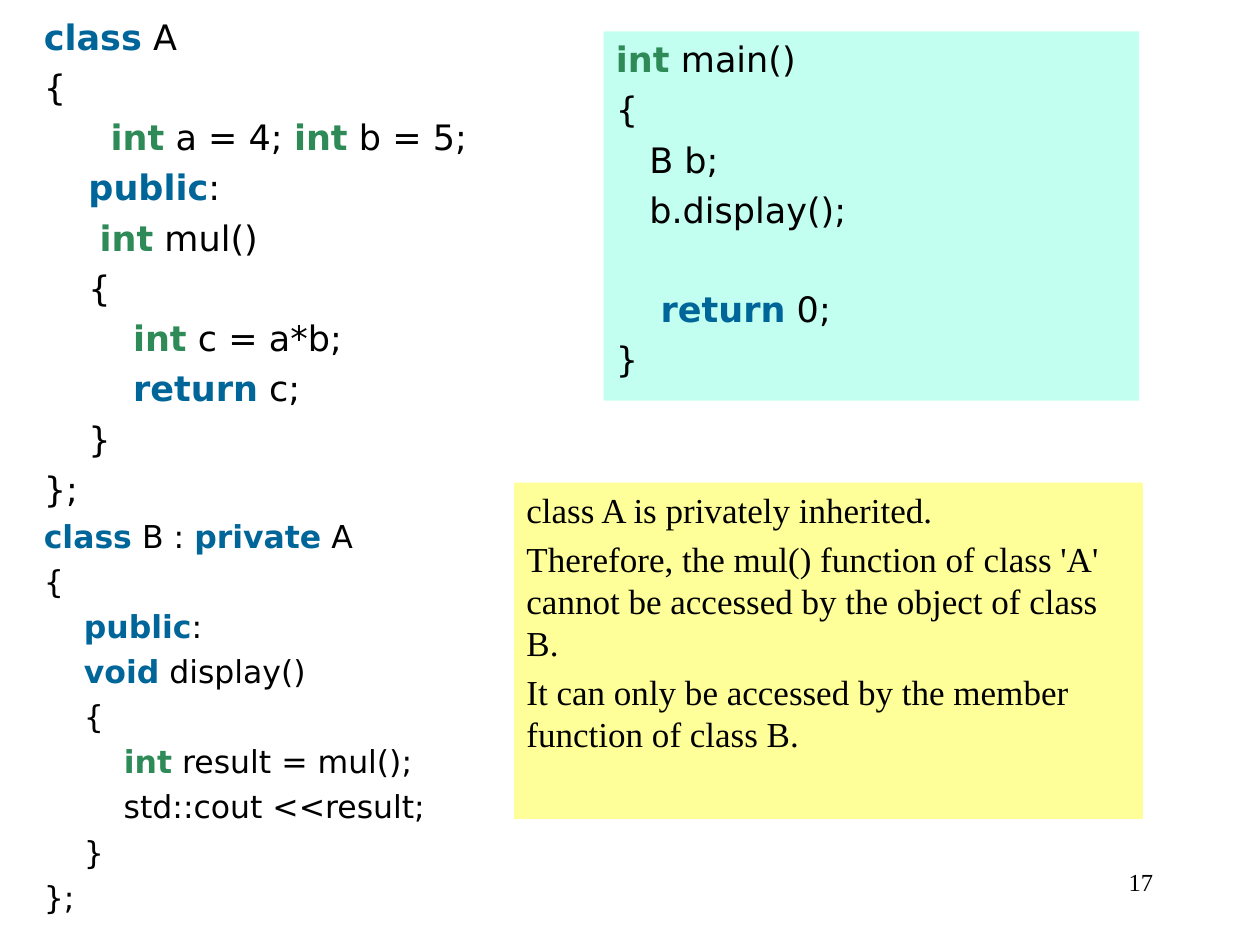
"""Build a slide on private inheritance with two code panels and an explanation."""
from dataclasses import dataclass
from typing import Optional

import pptx
import pptx.dml.color
import pptx.enum.text
import pptx.util

CODE_FONT = "DejaVu Sans"
PROSE_FONT = "Times New Roman"
BLACK = "000000"
KEYWORD_BLUE = "006699"
TYPE_GREEN = "2E8B57"
KEYWORD_COLORS = {
    "class": KEYWORD_BLUE,
    "public": KEYWORD_BLUE,
    "private": KEYWORD_BLUE,
    "void": KEYWORD_BLUE,
    "return": KEYWORD_BLUE,
    "int": TYPE_GREEN,
}

CLASS_A = """|class| A
{
      |int| a = 4; |int| b = 5;
    |public|:
     |int| mul()
    {
        |int| c = a*b;
        |return| c;
    }
};"""

CLASS_B = """|class| B : |private| A
{
    |public|:
    |void| display()
    {
        |int| result = mul();
        std::cout <<result;
    }
};"""

MAIN_START = """|int| main()
{
   B b;
   b.display();"""

MAIN_END = """    |return| 0;
}"""

EXPLANATION = [
    "class A is privately inherited.",
    "Therefore, the mul() function of class 'A' cannot be accessed by the object of class B.",
    "It can only be accessed by the member function of class B.",
]


@dataclass
class Panel:
    """Position and optional fill of a text panel, in inches."""

    left: float
    top: float
    width: float
    height: float
    fill: Optional[str] = None


@dataclass
class CodeBlock:
    """Code with keywords set off by bars, and its spacing in points."""

    code: str
    size: float
    gap: float
    gap_above: float


CLASSES_PANEL = Panel(0.25, 0.07, 4.67, 6.7)
MAIN_PANEL = Panel(4.79, 0.25, 4.25, 2.93, "C2FFF0")
EXPLANATION_PANEL = Panel(4.08, 3.83, 4.99, 2.67, "FFFF99")
NUMBER_PANEL = Panel(7.17, 6.83, 2.08, 0.5)


def color(value: str) -> pptx.dml.color.RGBColor:
    """Return the colour for a hex string."""
    return pptx.dml.color.RGBColor.from_string(value)


def format_run(run, font_name: str, size: float, hex_color: str = BLACK, bold: bool = False) -> None:
    """Set the font, size, colour and weight of a run."""
    run.font.name = font_name
    run.font.size = pptx.util.Pt(size)
    run.font.bold = bold
    run.font.color.rgb = color(hex_color)


def add_panel(slide, panel: Panel):
    """Add a wrapping text panel and return its text frame."""
    bounds = (panel.left, panel.top, panel.width, panel.height)
    shape = slide.shapes.add_textbox(*map(pptx.util.Inches, bounds))
    if panel.fill:
        shape.fill.solid()
        shape.fill.fore_color.rgb = color(panel.fill)
    shape.text_frame.word_wrap = True
    return shape.text_frame


def add_code(slide, panel: Panel, blocks: list[CodeBlock]) -> None:
    """Fill a panel with code blocks and colour their keywords."""
    text_frame = add_panel(slide, panel)
    paragraph = None
    for block in blocks:
        for index, line in enumerate(block.code.splitlines()):
            paragraph = text_frame.add_paragraph() if paragraph else text_frame.paragraphs[0]
            paragraph.space_before = pptx.util.Pt(block.gap if index else block.gap_above)
            for part in filter(None, line.split("|")):
                run = paragraph.add_run()
                run.text = part
                hex_color = KEYWORD_COLORS.get(part, BLACK)
                format_run(run, CODE_FONT, block.size, hex_color, part in KEYWORD_COLORS)


def add_explanation(slide, panel: Panel, sentences: list[str]) -> None:
    """Fill a panel with prose paragraphs."""
    text_frame = add_panel(slide, panel)
    text_frame.text = "\n".join(sentences)
    for index, paragraph in enumerate(text_frame.paragraphs):
        paragraph.line_spacing = pptx.util.Pt(24)
        paragraph.space_before = pptx.util.Pt(4 if index else 0)
        format_run(paragraph.runs[0], PROSE_FONT, 20)


def add_slide_number(slide, panel: Panel, number: str) -> None:
    """Add the right-aligned slide number."""
    paragraph = add_panel(slide, panel).paragraphs[0]
    paragraph.text = number
    paragraph.alignment = pptx.enum.text.PP_ALIGN.RIGHT
    format_run(paragraph.runs[0], PROSE_FONT, 14)


def main() -> None:
    """Build and save the presentation."""
    presentation = pptx.Presentation()
    presentation.slide_width = pptx.util.Inches(10)
    presentation.slide_height = pptx.util.Inches(7.5)
    slide = presentation.slides.add_slide(presentation.slide_layouts[6])
    add_code(slide, CLASSES_PANEL, [CodeBlock(CLASS_A, 20, 4.7, 0), CodeBlock(CLASS_B, 18, 4.2, 4.2)])
    add_code(slide, MAIN_PANEL, [CodeBlock(MAIN_START, 20, 4.7, 0), CodeBlock(MAIN_END, 20, 4.7, 32.7)])
    add_slide_number(slide, NUMBER_PANEL, "17")
    add_explanation(slide, EXPLANATION_PANEL, EXPLANATION)
    presentation.save("out.pptx")


if __name__ == "__main__":
    main()
